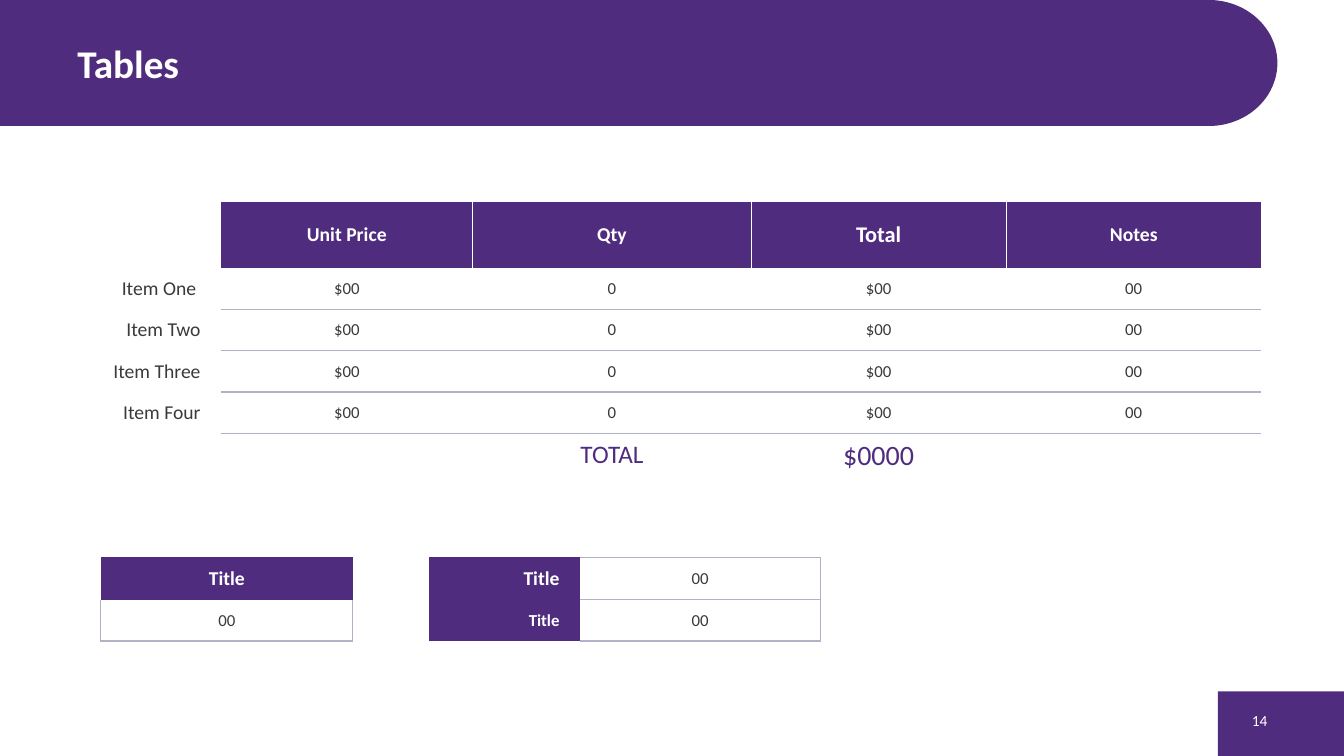
"""Build the "Tables" slide: a price table and two small title tables."""
from lxml import etree
from pptx import Presentation
from pptx.dml.color import RGBColor
from pptx.enum.shapes import MSO_SHAPE
from pptx.enum.text import MSO_ANCHOR, PP_ALIGN
from pptx.oxml.ns import qn
from pptx.util import Pt

PX = 9144
RECT, OVAL = MSO_SHAPE.RECTANGLE, MSO_SHAPE.OVAL
LEFT, CENTER, RIGHT = PP_ALIGN.LEFT, PP_ALIGN.CENTER, PP_ALIGN.RIGHT
MIDDLE = MSO_ANCHOR.MIDDLE
PURPLE, WHITE, INK, RULE = "502C7F", "FFFFFF", "3A3A3A", "AFB3C5"
NO_STYLE = "{2D5ABB26-0587-4C30-8999-92F81FD0307C}"


def write(frame, text, size, color, bold, align):
    frame.text = text
    paragraph = frame.paragraphs[0]
    paragraph.alignment = align
    for run in paragraph.runs:
        run.font.name = "Calibri"
        run.font.size = Pt(size)
        run.font.bold = bold
        run.font.color.rgb = RGBColor.from_string(color)


def add_borders(cell, edges):
    properties = cell._tc.get_or_add_tcPr()
    for side in "LRTB":
        line = etree.SubElement(properties, qn(f"a:ln{side}"), w=str(Pt(1)))
        if side in edges:
            fill = etree.SubElement(line, qn("a:solidFill"))
            etree.SubElement(fill, qn("a:srgbClr"), val=edges[side])
        else:
            etree.SubElement(line, qn("a:noFill"))


presentation = Presentation()
presentation.slide_width = 1333 * PX
presentation.slide_height = 750 * PX
slide = presentation.slides.add_slide(presentation.slide_layouts[6])

banner_and_corner = [
    (RECT, 1208, 686, 125, 64),
    (RECT, 0, 0, 1199, 125),
    (OVAL, 1131, 0, 136, 125),
]
for kind, *box in banner_and_corner:
    block = slide.shapes.add_shape(kind, *(n * PX for n in box))
    block.shadow.inherit = False
    block.fill.solid()
    block.fill.fore_color.rgb = RGBColor.from_string(PURPLE)
    block.line.fill.background()

captions = [
    ("Tables", 28, True, LEFT, (67, 8, 1000, 108)),
    ("14", 11, False, RIGHT, (1217, 695, 50, 40)),
]
for text, size, bold, align, box in captions:
    frame = slide.shapes.add_textbox(*(n * PX for n in box)).text_frame
    frame.word_wrap = True
    frame.vertical_anchor = MIDDLE
    write(frame, text, size, WHITE, bold, align)

white_frame = dict.fromkeys("LRTB", WHITE)
under = {"B": RULE}
between = {"T": RULE, "B": RULE}
over = {"T": RULE}
looks = {
    "blank": (12, INK, False, CENTER, WHITE, {}),
    "head": (14, WHITE, True, CENTER, PURPLE, white_frame),
    "big head": (16, WHITE, True, CENTER, PURPLE, white_frame),
    "label": (14, INK, False, RIGHT, WHITE, {}),
    "first value": (12, INK, False, CENTER, WHITE, under),
    "value": (12, INK, False, CENTER, WHITE, between),
    "total": (18, PURPLE, False, CENTER, WHITE, over),
    "sum": (20, PURPLE, False, CENTER, WHITE, over),
    "title": (14, WHITE, True, CENTER, PURPLE, {}),
    "side title": (14, WHITE, True, RIGHT, PURPLE, {}),
    "small side title": (12, WHITE, True, RIGHT, PURPLE, {}),
    "below title": (12, INK, False, CENTER, WHITE, {"L": RULE, "R": RULE, "B": RULE}),
    "beside title": (12, INK, False, CENTER, WHITE, {"R": RULE, **between}),
}

price_rows = [[("", "blank"), ("Unit Price", "head"), ("Qty", "head"),
               ("Total", "big head"), ("Notes", "head")]]
for item in ("Item One ", "Item Two", "Item Three", "Item Four"):
    look = "first value" if len(price_rows) == 1 else "value"
    price_rows.append([(item, "label")] + [(value, look) for value in ("$00", "0", "$00", "00")])
price_rows.append([("", "blank"), ("", "total"), ("TOTAL", "total"),
                   ("$0000", "sum"), ("", "total")])

tables = [
    (67, 200, [152, 250, 276, 253, 253], [66] + [41] * 5, price_rows),
    (100, 553, [250], [42, 41], [[("Title", "title")], [("00", "below title")]]),
    (425, 553, [150, 239], [42, 41],
     [[("Title", "side title"), ("00", "beside title")],
      [("Title", "small side title"), ("00", "beside title")]]),
]
for left, top, widths, heights, rows in tables:
    table = slide.shapes.add_table(
        len(heights), len(widths), left * PX, top * PX,
        sum(widths) * PX, sum(heights) * PX).table
    table.first_row = table.horz_banding = False
    table._tbl.tblPr.find(qn("a:tableStyleId")).text = NO_STYLE
    for column, width in zip(table.columns, widths):
        column.width = width * PX
    for row, height, contents in zip(table.rows, heights, rows):
        row.height = height * PX
        for cell, (text, look) in zip(row.cells, contents):
            size, color, bold, align, background, edges = looks[look]
            write(cell.text_frame, text, size, color, bold, align)
            cell.vertical_anchor = MIDDLE
            if align == RIGHT:
                cell.margin_left = cell.margin_right = 20 * PX
            add_borders(cell, edges)
            cell.fill.solid()
            cell.fill.fore_color.rgb = RGBColor.from_string(background)

presentation.save("out.pptx")
